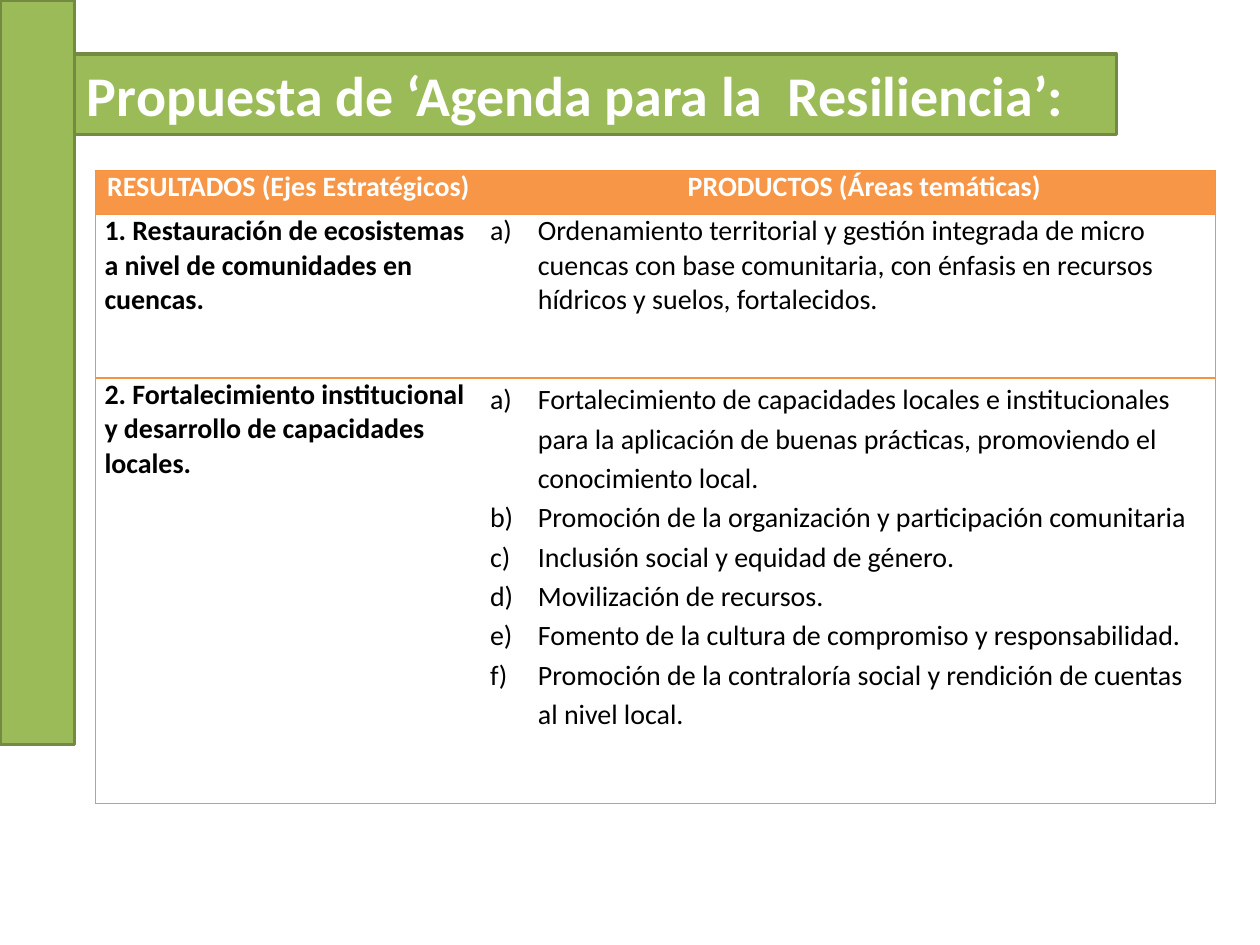
"""Build the resilience agenda slide."""
from lxml import etree
from pptx import Presentation
from pptx import util as u
from pptx.dml.color import RGBColor
from pptx.enum import shapes, text
from pptx.oxml.ns import qn

TITLE = "Propuesta de ‘Agenda para la  Resiliencia’:"
HEADS = ["RESULTADOS (Ejes Estratégicos)", "PRODUCTOS (Áreas temáticas)"]
AXES = [
    ("1. Restauración de ecosistemas a nivel de comunidades en cuencas.",
     ["Ordenamiento territorial y gestión integrada de micro cuencas con base "
      "comunitaria, con énfasis en recursos hídricos y suelos, fortalecidos."], 1.0),
    ("2. Fortalecimiento institucional y desarrollo de capacidades locales.",
     ["Fortalecimiento de capacidades locales e institucionales para la aplicación "
      "de buenas prácticas, promoviendo el conocimiento local.",
      "Promoción de la organización y participación comunitaria",
      "Inclusión social y equidad de género.",
      "Movilización de recursos.",
      "Fomento de la cultura de compromiso y responsabilidad.",
      "Promoción de la contraloría social y rendición de cuentas al nivel local."], 1.15),
]


def color(code):
    """Turn a hex string into a colour."""
    return RGBColor.from_string(code)


class Deck:
    """Hold the style and the current slide; lengths are percent of its size."""

    font, green, edge = "Calibri", "9BBB59", "738A42"
    head, rule, white, black = "F79646", "F69240", "FFFFFF", "000000"

    def __init__(self):
        self.prs = Presentation()
        self.prs.slide_width, self.prs.slide_height = u.Inches(10), u.Inches(7.5)
        self.slide = self.prs.slides.add_slide(self.prs.slide_layouts[5])

    def wide(self, part):
        """Give a share of the slide's width."""
        return round(self.prs.slide_width * part / 100)

    def high(self, part):
        """Give a share of the slide's height."""
        return round(self.prs.slide_height * part / 100)

    def box(self, x, y, w, h):
        """Give left, top, width and height."""
        return self.wide(x), self.high(y), self.wide(w), self.high(h)

    def paint(self, shape):
        """Give a shape the green fill and dark edge."""
        shape.fill.solid()
        shape.fill.fore_color.rgb = color(self.green)
        shape.line.color.rgb = color(self.edge)
        shape.line.width = u.Pt(2)

    def ink(self, para, size, tint, bold):
        """Format the runs of a paragraph."""
        for run in para.runs:
            run.font.name, run.font.size, run.font.bold = self.font, u.Pt(size), bold
            run.font.color.rgb = color(tint)

    def band(self, *area):
        """Draw a plain green rectangle."""
        shape = self.slide.shapes.add_shape(shapes.MSO_SHAPE.RECTANGLE, *self.box(*area))
        shape.shadow.inherit = False
        self.paint(shape)

    def title(self, words, *area):
        """Place the title on its green bar."""
        shape = self.slide.shapes.title
        shape.left, shape.top, shape.width, shape.height = self.box(*area)
        self.paint(shape)
        frame = shape.text_frame
        frame.text = words
        frame.word_wrap = True
        frame.auto_size = text.MSO_AUTO_SIZE.NONE
        frame.vertical_anchor = text.MSO_ANCHOR.MIDDLE
        frame.paragraphs[0].alignment = text.PP_ALIGN.LEFT
        self.ink(frame.paragraphs[0], 32, self.white, True)

    def table(self, x, y, cols, rows):
        """Add an empty table with the given column and row shares."""
        grid = self.slide.shapes.add_table(
            len(rows), len(cols), *self.box(x, y, sum(cols), sum(rows))).table
        grid.horz_banding = False
        for col, part in zip(grid.columns, cols):
            col.width = self.wide(part)
        for row, part in zip(grid.rows, rows):
            row.height = self.high(part)
        return grid

    def cell(self, cell, lines, tint, bold, sides, fill=None):
        """Fill a cell and rule the named sides; return its paragraphs."""
        cell.margin_left = cell.margin_right = u.Inches(0.07)
        cell.margin_top = cell.margin_bottom = 0
        cell.text_frame.text = "\n".join(lines)
        for para in cell.text_frame.paragraphs:
            self.ink(para, 16, tint, bold)
        prop = cell._tc.get_or_add_tcPr()
        for side in "LRTB":
            line = etree.SubElement(prop, qn("a:ln" + side), w=str(u.Pt(0.75)))
            if side in sides:
                solid = etree.SubElement(line, qn("a:solidFill"))
                etree.SubElement(solid, qn("a:srgbClr"), val=self.rule)
            else:
                etree.SubElement(line, qn("a:noFill"))
        if fill:
            cell.fill.solid()
            cell.fill.fore_color.rgb = color(fill)
        else:
            cell.fill.background()
        return cell.text_frame.paragraphs

    def letter(self, para, space):
        """Number a paragraph a), b), c) with a hanging indent."""
        para.line_spacing = space
        prop = para._p.get_or_add_pPr()
        prop.set("marL", str(u.Inches(0.38)))
        prop.set("indent", str(-u.Inches(0.38)))
        etree.SubElement(prop, qn("a:buFont"), typeface="+mj-lt")
        etree.SubElement(prop, qn("a:buAutoNum"), type="alphaLcParenR")


def main():
    """Build and save the slide."""
    deck = Deck()
    deck.band(0, 0, 5.9, 78.8)
    deck.title(TITLE, 5.9, 5.73, 82.7, 8.53)
    grid = deck.table(7.6, 18, [30.6, 58.3], [4.67, 17.33, 45.07])
    for col, (words, sides) in enumerate(zip(HEADS, ["LT", "RT"])):
        para = deck.cell(grid.cell(0, col), [words], deck.white, True, sides, deck.head)[0]
        para.alignment = text.PP_ALIGN.CENTER
        if col:
            para._p.get_or_add_pPr().set("marL", str(u.Inches(0.25)))
    for row, (axis, items, space) in enumerate(AXES, 1):
        deck.cell(grid.cell(row, 0), [axis], deck.black, True, "LTB")
        for para in deck.cell(grid.cell(row, 1), items, deck.black, False, "RTB"):
            deck.letter(para, space)
    deck.prs.save("out.pptx")


if __name__ == "__main__":
    main()
